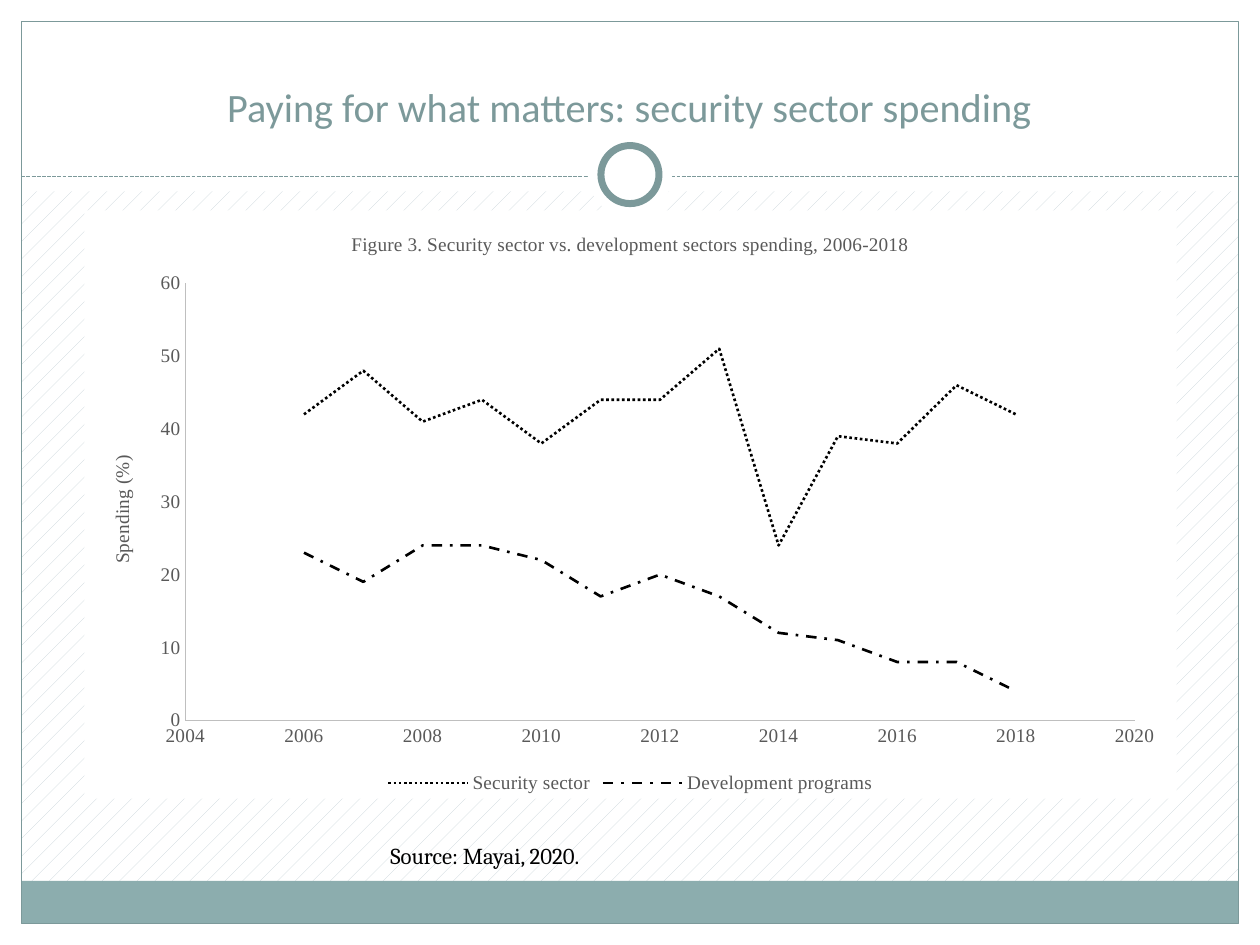
from lxml import etree
from pptx import Presentation
from pptx.chart.data import XyChartData
from pptx.dml.color import RGBColor
from pptx.enum.chart import XL_CHART_TYPE, XL_LEGEND_POSITION, XL_TICK_MARK
from pptx.enum.dml import MSO_LINE, MSO_PATTERN
from pptx.enum.shapes import MSO_CONNECTOR, MSO_SHAPE
from pptx.enum.text import MSO_ANCHOR, PP_ALIGN
from pptx.oxml import parse_xml
from pptx.oxml.ns import nsdecls, qn
from pptx.util import Cm, Pt

RECTANGLE, OVAL = MSO_SHAPE.RECTANGLE, MSO_SHAPE.OVAL
SMOOTH_SCATTER = XL_CHART_TYPE.XY_SCATTER_SMOOTH_NO_MARKERS
DOTTED, DASH_DOT, SHORT_DASH = MSO_LINE.ROUND_DOT, MSO_LINE.DASH_DOT, MSO_LINE.SQUARE_DOT
NO_TICK = XL_TICK_MARK.NONE

TITLE = "Paying for what matters: security sector spending"
SOURCE = "Source: Mayai, 2020."
CHART_TITLE = "Figure 3. Security sector vs. development sectors spending, 2006-2018"
VALUE_TITLE = "Spending (%)"
YEARS = range(2006, 2019)
SERIES = [
    ("Security sector", DOTTED, [42, 48, 41, 44, 38, 44, 44, 51, 24, 39, 38, 46, 42]),
    ("Development programs", DASH_DOT, [23, 19, 24, 24, 22, 17, 20, 17, 12, 11, 8, 8, 4]),
]
PLOT = {"x": 0.0925, "y": 0.124, "w": 0.869, "h": 0.743}

WIDTH, HEIGHT, MARGIN = 25.4, 19.05, 0.43
HEADER, RULE_Y, BAND = 3.86, 3.56, 0.86
TEAL, BAND_TEAL, WHITE, BLACK = "7C999A", "8CADAE", "FFFFFF", "000000"
GREY, AXIS_GREY, SERIF = "595959", "BFBFBF", "Times New Roman"


def color(value):
    return RGBColor.from_string(value)


def style_font(font, size=11, name=SERIF, fill=GREY):
    font.size, font.name, font.bold = Pt(size), name, False
    font.color.rgb = color(fill)


def style_line(line, fill, width=0.75, dash=None):
    line.color.rgb = color(fill)
    line.width = Pt(width)
    if dash:
        line.dash_style = dash


def write(frame, text, align=PP_ALIGN.LEFT, **font):
    para = frame.paragraphs[0]
    para.alignment = align
    span = para.add_run()
    span.text = text
    style_font(span.font, **font)


def add_shape(page, kind, left, top, width, height, fill=None, line=None, weight=0.75):
    shape = page.shapes.add_shape(kind, Cm(left), Cm(top), Cm(width), Cm(height))
    shape.shadow.inherit = False
    if fill:
        shape.fill.solid()
        shape.fill.fore_color.rgb = color(fill)
    else:
        shape.fill.background()
    if line:
        style_line(shape.line, line, weight)
    else:
        shape.line.fill.background()


def add_circle(page, diameter, **style):
    add_shape(page, OVAL, (WIDTH - diameter) / 2, 3.52 - diameter / 2, diameter, diameter, **style)


def add_frame(page):
    fill = page.background.fill
    fill.patterned()
    fill.pattern = MSO_PATTERN.PERCENT_5
    fill.fore_color.rgb, fill.back_color.rgb = color("C5D1D7"), color(WHITE)
    inner_width, inner_height = WIDTH - 2 * MARGIN, HEIGHT - 2 * MARGIN
    for box in [
        (0, HEIGHT - MARGIN, WIDTH, MARGIN),
        (0, 0, WIDTH, HEADER),
        (0, 0, MARGIN, HEIGHT),
        (WIDTH - MARGIN, 0, MARGIN, HEIGHT),
    ]:
        add_shape(page, RECTANGLE, *box, fill=WHITE)
    add_shape(page, RECTANGLE, MARGIN, HEIGHT - MARGIN - BAND, inner_width, BAND, fill=BAND_TEAL)
    add_shape(page, RECTANGLE, MARGIN, MARGIN, inner_width, inner_height, line=TEAL)
    rule = page.shapes.add_connector(
        MSO_CONNECTOR.STRAIGHT, Cm(MARGIN), Cm(RULE_Y), Cm(WIDTH - MARGIN), Cm(RULE_Y))
    style_line(rule.line, TEAL, dash=SHORT_DASH)
    etree.SubElement(rule._element.spPr, qn("a:effectLst"))
    add_circle(page, 1.7, fill=WHITE)
    add_circle(page, 1.17, fill=WHITE, line=TEAL, weight=4)


def add_title(page):
    title = page.shapes.title
    title.left, title.top, title.width, title.height = Cm(0.85), Cm(0.64), Cm(23.7), Cm(2.12)
    title.text_frame.vertical_anchor = MSO_ANCHOR.BOTTOM
    write(title.text_frame, TITLE, PP_ALIGN.CENTER, size=23, name="Calibri", fill=TEAL)
    page.shapes._spTree.append(title._element)


def add_source(page):
    box = page.shapes.add_textbox(Cm(7.62), Cm(16.84), Cm(4.88), Cm(0.81))
    box.text_frame.word_wrap = False
    write(box.text_frame, SOURCE, size=13, name="Cambria", fill=BLACK)


def style_axis(axis, low, high, step, number_format):
    axis.minimum_scale, axis.maximum_scale, axis.major_unit = low, high, step
    axis.has_major_gridlines = axis.has_minor_gridlines = False
    axis.major_tick_mark = axis.minor_tick_mark = NO_TICK
    axis.tick_labels.number_format = number_format
    axis.tick_labels.number_format_is_linked = False
    style_font(axis.tick_labels.font)
    style_line(axis.format.line, AXIS_GREY)


def place_plot(chart):
    plot_area = chart._chartSpace.chart.plotArea
    for old in plot_area.findall(qn("c:layout")):
        plot_area.remove(old)
    modes = '<c:layoutTarget val="inner"/><c:xMode val="edge"/><c:yMode val="edge"/>'
    sizes = "".join(f'<c:{key} val="{value}"/>' for key, value in PLOT.items())
    plot_area.insert(0, parse_xml(
        f'<c:layout {nsdecls("c")}><c:manualLayout>{modes}{sizes}</c:manualLayout></c:layout>'))


def fill_chart_area(chart):
    area = parse_xml(
        f'<c:spPr {nsdecls("c", "a")}><a:solidFill><a:srgbClr val="{WHITE}"/></a:solidFill>'
        '<a:ln><a:noFill/></a:ln></c:spPr>')
    chart._chartSpace.chart.addnext(area)


def add_spending_chart(page):
    data = XyChartData(number_format="0")
    for name, _, values in SERIES:
        series = data.add_series(name)
        for year, value in zip(YEARS, values):
            series.add_data_point(year, value)
    chart = page.shapes.add_chart(
        SMOOTH_SCATTER, Cm(1.7), Cm(4.24), Cm(22.02), Cm(11.86), data).chart
    style_font(chart.font, fill=BLACK)
    chart.has_title = True
    write(chart.chart_title.text_frame, CHART_TITLE, PP_ALIGN.CENTER)
    chart.chart_title.include_in_layout = False
    style_axis(chart.category_axis, 2004, 2020, 2, "General")
    style_axis(chart.value_axis, 0, 60, 10, "0")
    write(chart.value_axis.axis_title.text_frame, VALUE_TITLE, PP_ALIGN.CENTER)
    chart.has_legend = True
    chart.legend.position = XL_LEGEND_POSITION.BOTTOM
    chart.legend.include_in_layout = False
    style_font(chart.legend.font)
    chart.plots[0].vary_by_categories = False
    for series, (_, dash, _) in zip(chart.plots[0].series, SERIES):
        style_line(series.format.line, BLACK, 1.5, dash)
    place_plot(chart)
    fill_chart_area(chart)


def main():
    deck = Presentation()
    deck.slide_width, deck.slide_height = Cm(WIDTH), Cm(HEIGHT)
    page = deck.slides.add_slide(deck.slide_layouts[5])
    add_frame(page)
    add_title(page)
    add_source(page)
    add_spending_chart(page)
    deck.save("out.pptx")


if __name__ == "__main__":
    main()
